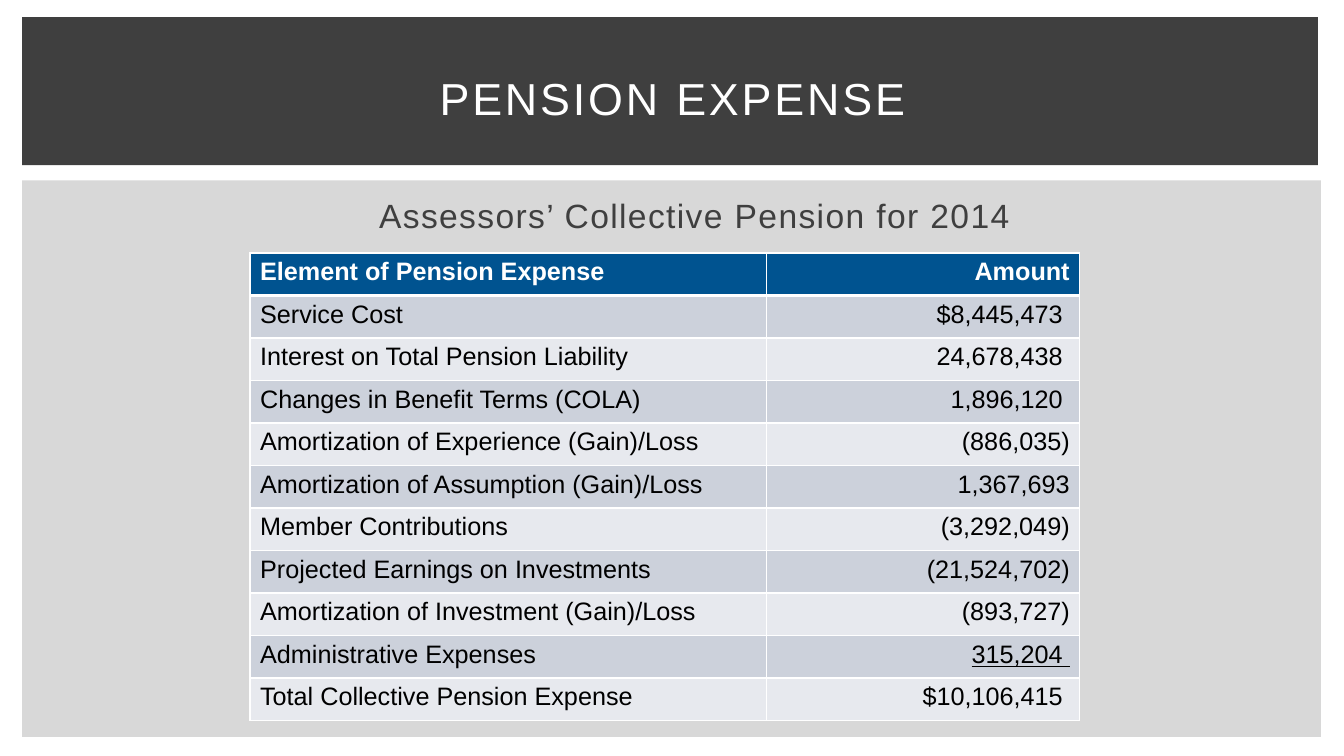
from lxml import etree
from pptx import Presentation
from pptx.dml.color import RGBColor
from pptx.enum.shapes import MSO_SHAPE
from pptx.enum.text import MSO_ANCHOR, MSO_AUTO_SIZE, PP_ALIGN
from pptx.oxml.ns import qn
from pptx.util import Inches, Pt

TITLE = "PENSION EXPENSE"
SUBTITLE = "Assessors’ Collective Pension for 2014"
EXPENSES = [
    ("Element of Pension Expense", "Amount"),
    ("Service Cost", "$8,445,473 "),
    ("Interest on Total Pension Liability", "24,678,438 "),
    ("Changes in Benefit Terms (COLA)", "1,896,120 "),
    ("Amortization of Experience (Gain)/Loss", "(886,035)"),
    ("Amortization of Assumption (Gain)/Loss", "1,367,693"),
    ("Member Contributions", "(3,292,049)"),
    ("Projected Earnings on Investments", "(21,524,702)"),
    ("Amortization of Investment (Gain)/Loss", "(893,727)"),
    ("Administrative Expenses", "315,204 "),
    ("Total Collective Pension Expense", "$10,106,415 "),
]
COLUMN_WIDTHS = (5.12, 3.11)
TABLE_HEIGHT = 4.64
LAST_ADDEND = len(EXPENSES) - 2

FONT = "Arial"
WHITE = RGBColor(0xFF, 0xFF, 0xFF)
BLACK = RGBColor(0, 0, 0)
CHARCOAL = RGBColor(0x3F, 0x3F, 0x3F)
PALE_GREY = RGBColor(0xD8, 0xD8, 0xD8)
HEADER_BLUE = RGBColor(0x00, 0x53, 0x90)
DARK_BAND = RGBColor(0xCC, 0xD1, 0xDB)
LIGHT_BAND = RGBColor(0xE7, 0xE9, 0xEE)

RECTANGLE = MSO_SHAPE.RECTANGLE
LEFT, CENTER, RIGHT = PP_ALIGN.LEFT, PP_ALIGN.CENTER, PP_ALIGN.RIGHT
TOP, MIDDLE = MSO_ANCHOR.TOP, MSO_ANCHOR.MIDDLE
NO_AUTOFIT = MSO_AUTO_SIZE.NONE


def add_panel(page, color, *bounds):
    panel = page.shapes.add_shape(RECTANGLE, *map(Inches, bounds))
    panel.shadow.inherit = False
    panel.fill.solid()
    panel.fill.fore_color.rgb = color
    panel.line.fill.background()


def style_para(para, size, color, align, bold=False):
    para.alignment = align
    para.font.name = FONT
    para.font.size = Pt(size)
    para.font.bold = bold
    para.font.color.rgb = color


def fill_placeholder(box, text, bounds, anchor, size, color, spacing):
    box.left, box.top, box.width, box.height = map(Inches, bounds)
    frame = box.text_frame
    frame.text = text
    frame.word_wrap = True
    frame.auto_size = NO_AUTOFIT
    frame.vertical_anchor = anchor
    para = frame.paragraphs[0]
    style_para(para, size, color, CENTER)
    for props in box.element.iter(qn("a:defRPr")):
        props.set("spc", str(spacing * 100))
    # Bring the text in front of the panels
    box.element.getparent().append(box.element)
    return para


def add_border(cell, side, points):
    props = cell._tc.get_or_add_tcPr()
    line = etree.SubElement(props, qn(f"a:ln{side}"), w=str(Pt(points)))
    fill = etree.SubElement(line, qn("a:solidFill"))
    etree.SubElement(fill, qn("a:srgbClr"), val=str(WHITE))


def row_color(row):
    if row == 0:
        return HEADER_BLUE
    return DARK_BAND if row % 2 else LIGHT_BAND


def add_expense_table(page):
    table = page.shapes.add_table(
        len(EXPENSES), len(COLUMN_WIDTHS), Inches(2.48), Inches(2.51),
        Inches(sum(COLUMN_WIDTHS)), Inches(TABLE_HEIGHT)).table
    for column, width in zip(table.columns, COLUMN_WIDTHS):
        column.width = Inches(width)
    for row, texts in enumerate(EXPENSES):
        for col, text in enumerate(texts):
            cell = table.cell(row, col)
            cell.text = text
            is_header = row == 0
            para = cell.text_frame.paragraphs[0]
            style_para(para, 18, WHITE if is_header else BLACK,
                       RIGHT if col else LEFT, is_header)
            if row == LAST_ADDEND and col == 1:
                para.font.underline = True
            # The rule under the header is thicker
            for side in "LRTB":
                thick = (row, side) in ((0, "B"), (1, "T"))
                add_border(cell, side, 3 if thick else 1)
            cell.fill.solid()
            cell.fill.fore_color.rgb = row_color(row)


def main():
    deck = Presentation()
    deck.slide_width, deck.slide_height = Inches(13.33), Inches(7.5)
    page = deck.slides.add_slide(deck.slide_layouts[1])

    # Background panels
    add_panel(page, PALE_GREY, 0.22, 1.79, 12.88, 5.52)
    add_panel(page, CHARCOAL, 0.22, 0.17, 12.85, 1.47)

    # Title and subtitle
    fill_placeholder(page.shapes.title, TITLE, (0.56, 0.39, 12.22, 1.15),
                     MIDDLE, 32, WHITE, 2)
    para = fill_placeholder(page.placeholders[1], SUBTITLE,
                            (0.56, 1.88, 12.26, 4.82), TOP, 24, CHARCOAL, 1)
    para.space_before = Pt(4.8)
    props = para._p.get_or_add_pPr()
    props.set("marL", str(Inches(0.4)))
    props.set("indent", "0")
    props.find(qn("a:defRPr")).addprevious(etree.Element(qn("a:buNone")))

    # Expense table
    add_expense_table(page)

    deck.save("out.pptx")


if __name__ == "__main__":
    main()
